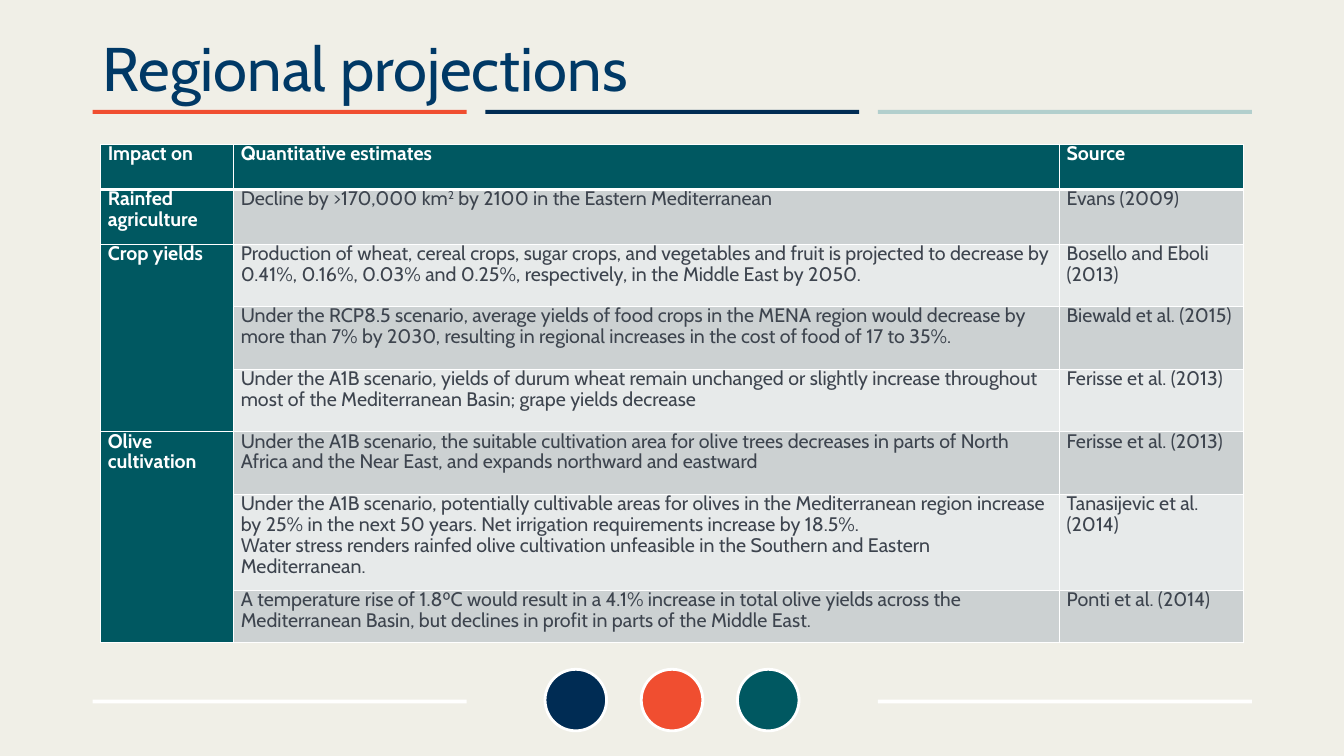
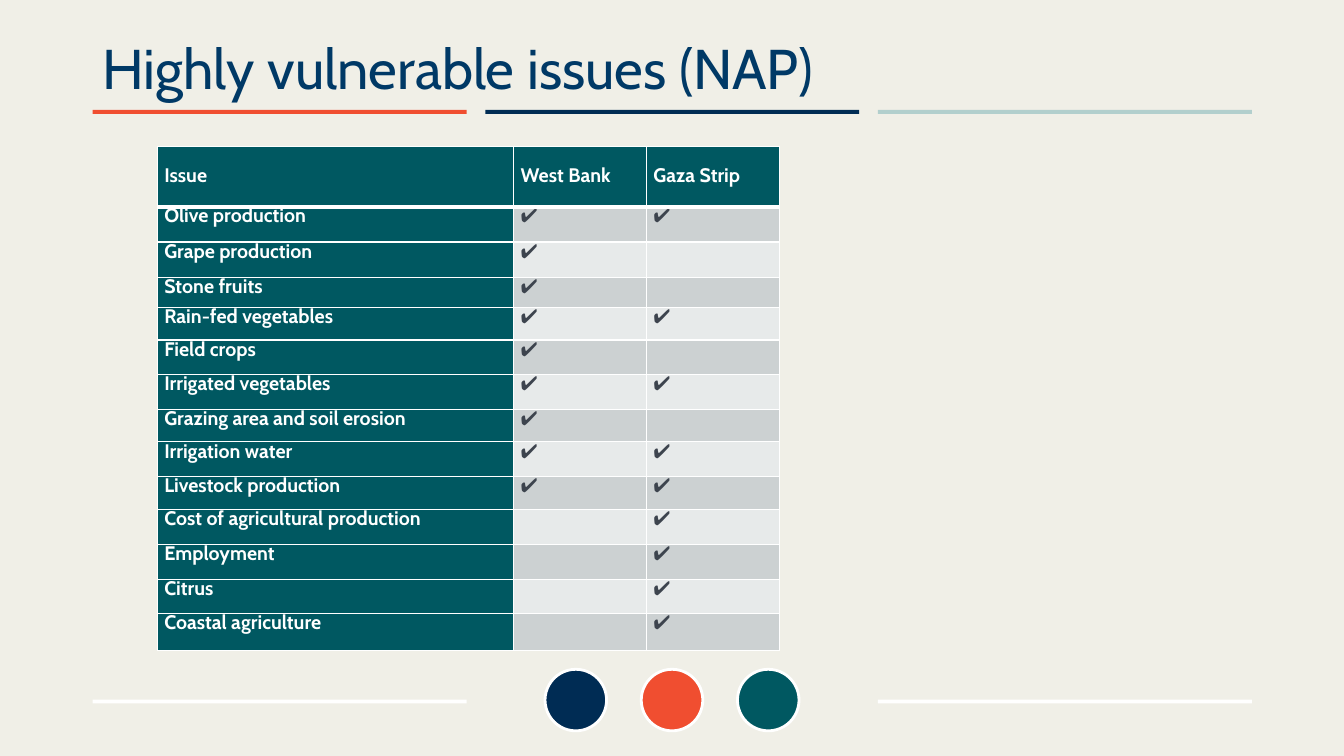
"""Builds two slides on regional climate projections and vulnerable farming issues."""
from dataclasses import dataclass
from typing import Optional, Union

from lxml import etree
from pptx import Presentation
from pptx import util as u
from pptx.dml.color import RGBColor
from pptx.enum import shapes, text
from pptx.oxml import ns

WIDTH, HEIGHT = u.Inches(13.33), u.Inches(7.5)
FONT = "Cabin"
COLORS = {
    "paper": "F0EFE7", "navy": "002C54", "orange": "F04E30", "teal": "005861",
    "mist": "B2CFCD", "white": "FFFFFF", "title": "003966", "body": "3D444E",
    "band_dark": "CCD1D2", "band_light": "E7EAEA",
}
MARGIN, CONTENT, GUTTER = 6.9, 86.25, 1.39
COLUMN = (CONTENT - 2 * GUTTER) / 3
BAR_HEIGHT = 0.53
CIRCLE, CIRCLE_PITCH = 4.58, 7.16


@dataclass(frozen=True)
class Bar:
    """A thin rule in one of three columns, with its top in percent of the height."""
    column: int
    top: float
    color: str


@dataclass(frozen=True)
class TableSpec:
    """A table: place in percent of the slide, relative columns and rows, and content."""
    left: float
    top: float
    width: float
    height: float
    columns: list[int]
    rows: list[int]
    cells: list[tuple[Optional[str], ...]]
    header_anchor: text.MSO_ANCHOR = text.MSO_ANCHOR.TOP


@dataclass(frozen=True)
class SlideSpec:
    """A slide title with its size and the table below it."""
    title: str
    title_size: int
    table: TableSpec


BARS = [
    Bar(0, 14.53, "orange"), Bar(1, 14.53, "navy"), Bar(2, 14.53, "mist"),
    Bar(0, 92.53, "white"), Bar(2, 92.53, "white"),
]
CIRCLES = ["navy", "orange", "teal"]

PROJECTIONS = [
    ("Impact on", "Quantitative estimates", "Source"),
    ("Rainfed agriculture",
     "Decline by >170,000 km^2^ by 2100 in the Eastern Mediterranean",
     "Evans (2009)"),
    ("Crop yields",
     "Production of wheat, cereal crops, sugar crops, and vegetables and fruit is projected "
     "to decrease by 0.41%, 0.16%, 0.03% and 0.25%, respectively, in the Middle East by 2050.",
     "Bosello and Eboli (2013)"),
    (None,
     "Under the RCP8.5 scenario, average yields of food crops in the MENA region would decrease "
     "by more than 7% by 2030, resulting in regional increases in the cost of food of 17 to 35%.",
     "Biewald et al. (2015)"),
    (None,
     "Under the A1B scenario, yields of durum wheat remain unchanged or slightly increase "
     "throughout most of the Mediterranean Basin; grape yields decrease",
     "Ferisse et al. (2013)"),
    ("Olive cultivation",
     "Under the A1B scenario, the suitable cultivation area for olive trees decreases in parts "
     "of North Africa and the Near East, and expands northward and eastward",
     "Ferisse et al. (2013)"),
    (None,
     "Under the A1B scenario, potentially cultivable areas for olives in the Mediterranean "
     "region increase by 25% in the next 50 years. Net irrigation requirements increase by 18.5%.\n"
     "Water stress renders rainfed olive cultivation unfeasible in the Southern and Eastern "
     "Mediterranean.",
     "Tanasijevic et al. (2014)"),
    (None,
     "A temperature rise of 1.8⁰C would result in a 4.1% increase in total olive yields across "
     "the Mediterranean Basin, but declines in profit in parts of the Middle East.",
     "Ponti et al. (2014)"),
]
YES, NO = "✔", ""
ISSUES = [
    ("Issue", "West Bank", "Gaza Strip"),
    ("Olive production", YES, YES),
    ("Grape production", YES, NO),
    ("Stone fruits", YES, NO),
    ("Rain-fed vegetables", YES, YES),
    ("Field crops", YES, NO),
    ("Irrigated vegetables", YES, YES),
    ("Grazing area and soil erosion", YES, NO),
    ("Irrigation water", YES, YES),
    ("Livestock production", YES, YES),
    ("Cost of agricultural production", NO, YES),
    ("Employment", NO, YES),
    ("Citrus", NO, YES),
    ("Coastal agriculture", NO, YES),
]
SLIDES = [
    SlideSpec("Regional projections", 44, TableSpec(
        7.5, 19.07, 85.05, 66, [132, 820, 183],
        [45, 54, 62, 62, 62, 62, 95, 52], PROJECTIONS)),
    SlideSpec("Highly vulnerable issues (NAP)", 40, TableSpec(
        11.7, 19.33, 46.28, 66.13, [354, 132, 132],
        [60, 35, 35, 25, 32, 34, 35, 32, 34, 33, 35, 34, 34, 37], ISSUES,
        text.MSO_ANCHOR.MIDDLE)),
]


def x(percent: float) -> int:
    """Return a share of the slide width."""
    return round(WIDTH * percent / 100)


def y(percent: float) -> int:
    """Return a share of the slide height."""
    return round(HEIGHT * percent / 100)


def rgb(name: str) -> RGBColor:
    """Look up a named colour."""
    return RGBColor.from_string(COLORS[name])


def write(tf, content: str, *, size: float, color: str, bold: bool = False,
          spacing: Union[float, u.Length] = 1.0) -> None:
    """Fill a text frame, one paragraph a line; carets enclose superscripts."""
    for i, line in enumerate(content.split("\n")):
        p = tf.add_paragraph() if i else tf.paragraphs[0]
        p.line_spacing = spacing
        for j, part in enumerate(line.split("^")):
            if not part:
                continue
            r = p.add_run()
            r.text = part
            r.font.name, r.font.size, r.font.bold = FONT, u.Pt(size), bold
            r.font.color.rgb = rgb(color)
            if j % 2:
                r.font._element.set("baseline", "30000")


def add_filled(s, kind: shapes.MSO_SHAPE, box: tuple[int, ...], color: str,
               outline: Optional[str] = None) -> None:
    """Add a flat shape with an optional outline."""
    sp = s.shapes.add_shape(kind, *box)
    sp.shadow.inherit = False
    sp.fill.solid()
    sp.fill.fore_color.rgb = rgb(color)
    if outline:
        sp.line.color.rgb = rgb(outline)
        sp.line.width = u.Pt(2)
    else:
        sp.line.fill.background()


def add_frame(s) -> None:
    """Draw the rules and circles that every slide carries."""
    for bar in BARS:
        left = MARGIN + bar.column * (COLUMN + GUTTER)
        add_filled(s, shapes.MSO_SHAPE.RECTANGLE,
                   (x(left), y(bar.top), x(COLUMN), y(BAR_HEIGHT)), bar.color)
    for i, color in enumerate(CIRCLES):
        left = 50 - CIRCLE / 2 + (i - 1) * CIRCLE_PITCH
        add_filled(s, shapes.MSO_SHAPE.OVAL,
                   (x(left), y(88.53), x(CIRCLE), x(CIRCLE)), color, "white")


def add_title(s, content: str, size: float) -> None:
    """Add the slide title."""
    tf = s.shapes.add_textbox(x(MARGIN), y(1.47), x(CONTENT), y(16)).text_frame
    tf.word_wrap = True
    tf.vertical_anchor = text.MSO_ANCHOR.MIDDLE
    write(tf, content, size=size, color="title", spacing=0.9)


def set_borders(cell, row: int) -> None:
    """Give a cell white borders, thick below the header."""
    widths = {"L": 1, "R": 1, "T": 3 if row == 1 else 1, "B": 3 if row == 0 else 1}
    for side, width in widths.items():
        ln = etree.SubElement(cell._tc.get_or_add_tcPr(), ns.qn(f"a:ln{side}"),
                              w=str(u.Pt(width)))
        fill = etree.SubElement(ln, ns.qn("a:solidFill"))
        etree.SubElement(fill, ns.qn("a:srgbClr"), val=COLORS["white"])


def fill_cell(cell, content: Optional[str], row: int, col: int) -> None:
    """Format one table cell and write its text."""
    heading = row == 0 or col == 0
    band = "band_dark" if row % 2 else "band_light"
    set_borders(cell, row)
    cell.fill.solid()
    cell.fill.fore_color.rgb = rgb("teal" if heading else band)
    cell.margin_left = cell.margin_right = u.Inches(0.07)
    cell.margin_top = cell.margin_bottom = 0
    write(cell.text_frame, content or "", size=14, color="white" if heading else "body",
          bold=heading, spacing=u.Pt(15))


def add_grid(s, spec: TableSpec) -> None:
    """Add a table whose unlabelled rows join the label above."""
    width, height = x(spec.width), y(spec.height)
    table = s.shapes.add_table(len(spec.rows), len(spec.columns), x(spec.left),
                               y(spec.top), width, height).table
    table.first_row = table.horz_banding = False
    for column, share in zip(table.columns, spec.columns):
        column.width = round(width * share / sum(spec.columns))
    for row, share in zip(table.rows, spec.rows):
        row.height = round(height * share / sum(spec.rows))
    for i, contents in enumerate(spec.cells):
        for j, content in enumerate(contents):
            fill_cell(table.cell(i, j), content, i, j)
    for cell in table.rows[0].cells:
        cell.vertical_anchor = spec.header_anchor
    labels = [i for i, contents in enumerate(spec.cells) if contents[0] is not None]
    for first, following in zip(labels, labels[1:] + [len(spec.cells)]):
        if following - first > 1:
            table.cell(first, 0).merge(table.cell(following - 1, 0))


def main() -> None:
    """Build and save the presentation."""
    prs = Presentation()
    prs.slide_width, prs.slide_height = WIDTH, HEIGHT
    background = prs.slide_master.background.fill
    background.solid()
    background.fore_color.rgb = rgb("paper")
    for spec in SLIDES:
        s = prs.slides.add_slide(prs.slide_layouts[6])
        add_frame(s)
        add_title(s, spec.title, spec.title_size)
        add_grid(s, spec.table)
    prs.save("out.pptx")


if __name__ == "__main__":
    main()
